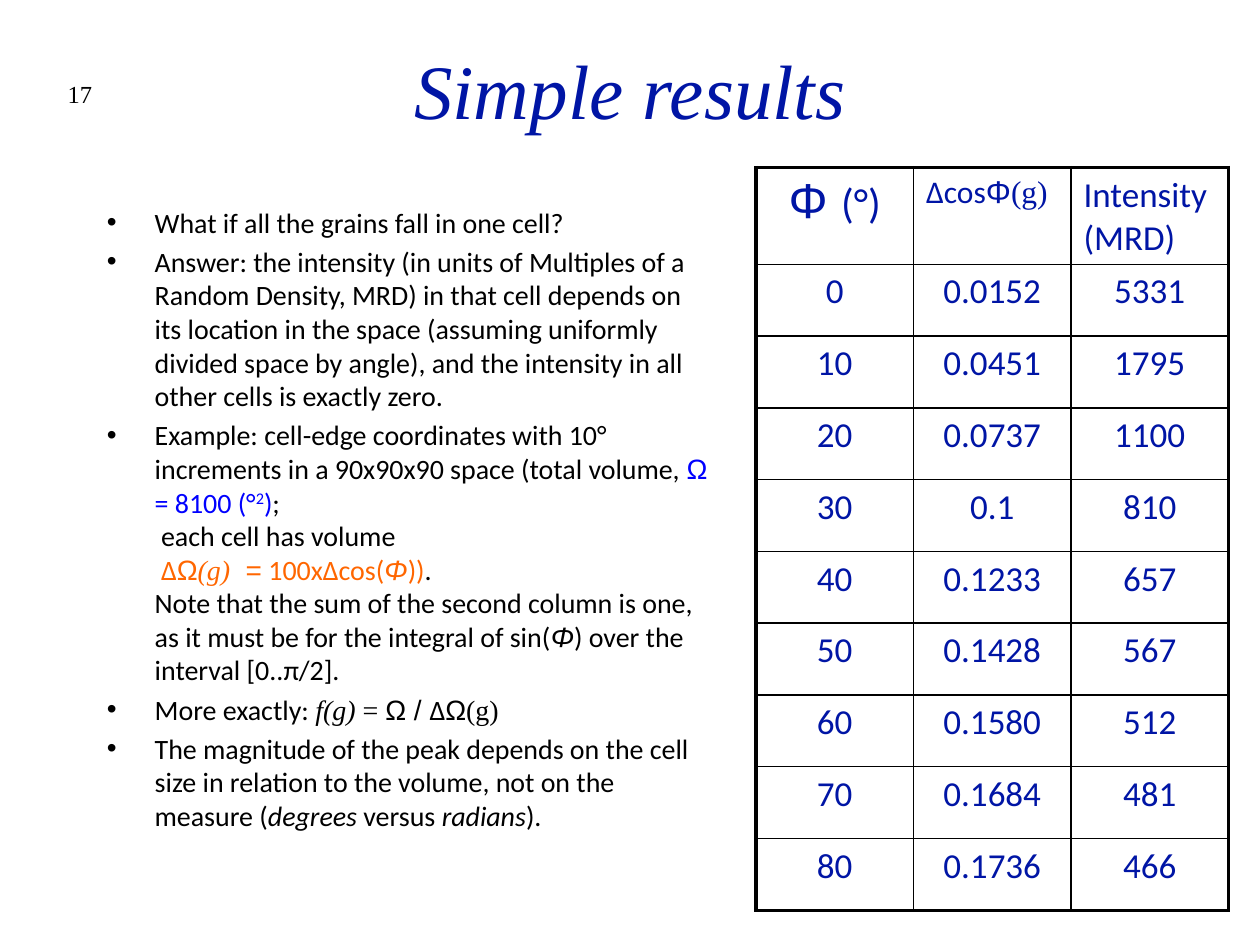
from dataclasses import dataclass

from lxml.etree import SubElement
from pptx import Presentation
from pptx.dml.color import RGBColor
from pptx.enum.text import MSO_ANCHOR, PP_ALIGN
from pptx.oxml.ns import qn
from pptx.util import Inches, Pt


@dataclass(frozen=True)
class Theme:
    sans: str = "Calibri"
    symbol: str = "Arial"
    serif: str = "Times New Roman"
    navy: str = "0015A5"
    black: str = "000000"
    blue: str = "0000FF"
    orange: str = "FF6600"
    title_size: int = 44
    phi_size: int = 28
    unit_size: int = 24
    cell_size: int = 20
    delta_size: int = 18
    body_size: int = 16
    number_size: int = 14
    outer_line: float = 2.25
    inner_line: float = 1


THEME = Theme()


@dataclass(frozen=True)
class Span:
    text: str
    font: str = THEME.sans
    color: str = THEME.black
    size: int = THEME.body_size
    italic: bool = False
    raised: bool = False


@dataclass(frozen=True)
class Box:
    left: float
    top: float
    width: float
    height: float

    def lengths(self):
        return [Inches(n) for n in (self.left, self.top, self.width, self.height)]


BULLETS = [
    [Span("What if all the grains fall in one cell?")],
    [Span("Answer: the intensity (in units of Multiples of a Random Density, MRD) "
          "in that cell depends on its location in the space (assuming uniformly "
          "divided space by angle), and the intensity in all other cells is exactly zero.")],
    [
        Span("Example: cell-edge coordinates with 10° increments in a 90x90x90 space "
             "(total volume, "),
        Span("Ω", THEME.symbol, THEME.blue),
        Span(" = 8100 (°", color=THEME.blue),
        Span("2", color=THEME.blue, raised=True),
        Span(")", color=THEME.blue),
        Span(";\n each cell has volume \n"),
        Span(" ∆", color=THEME.orange),
        Span("Ω", THEME.symbol, THEME.orange),
        Span("(g)", THEME.serif, THEME.orange, italic=True),
        Span("  =", THEME.symbol, THEME.orange),
        Span(" 100x∆cos(", color=THEME.orange),
        Span("Φ", THEME.symbol, THEME.orange, italic=True),
        Span("))", color=THEME.orange),
        Span(".  \nNote that the sum of the second column is one, as it must be "
             "for the integral of sin("),
        Span("Φ", THEME.symbol, italic=True),
        Span(") over the interval [0..π/2]."),
    ],
    [
        Span("More exactly: "),
        Span("f(g)", THEME.serif, italic=True),
        Span(" = ", THEME.serif),
        Span("Ω / ", THEME.symbol),
        Span("∆"),
        Span("Ω", THEME.symbol),
        Span("(g)", THEME.serif),
    ],
    [
        Span("The magnitude of the peak depends on the cell size in relation to the "
             "volume, not on the measure ("),
        Span("degrees ", italic=True),
        Span("versus "),
        Span("radians", italic=True),
        Span(")."),
    ],
]

HEADINGS = [
    [Span("Φ ", THEME.symbol, THEME.navy, THEME.phi_size),
     Span("(°)", color=THEME.navy, size=THEME.unit_size)],
    [Span("∆cos", color=THEME.navy, size=THEME.delta_size),
     Span("Φ", THEME.symbol, THEME.navy, THEME.delta_size),
     Span("(g)", THEME.serif, THEME.navy, THEME.delta_size)],
    [Span("Intensity (MRD)", color=THEME.navy, size=THEME.cell_size)],
]

RESULTS = [
    ("0", "0.0152", "5331"),
    ("10", "0.0451", "1795"),
    ("20", "0.0737", "1100"),
    ("30", "0.1", "810"),
    ("40", "0.1233", "657"),
    ("50", "0.1428", "567"),
    ("60", "0.1580", "512"),
    ("70", "0.1684", "481"),
    ("80", "0.1736", "466"),
]


def write(para, spans, align=PP_ALIGN.LEFT, spaced=False):
    para.alignment = align
    if spaced:
        para.space_before = Pt(round(0.2 * max(span.size for span in spans), 1))
    for span in spans:
        for index, line in enumerate(span.text.split("\n")):
            if index:
                para.add_line_break()
            if not line:
                continue
            run = para.add_run()
            run.text = line
            run.font.name = span.font
            run.font.size = Pt(span.size)
            run.font.italic = span.italic
            run.font.bold = False
            run.font.color.rgb = RGBColor.from_string(span.color)
            if span.raised:
                run.font._element.set("baseline", "30000")


def add_bullet(para):
    properties = para._p.get_or_add_pPr()
    properties.set("marL", str(Inches(0.38)))
    properties.set("indent", str(Inches(-0.38)))
    SubElement(properties, qn("a:buFont"), typeface=THEME.symbol)
    SubElement(properties, qn("a:buChar"), char="•")


def add_border(cell, side, width):
    properties = cell._tc.get_or_add_tcPr()
    line = SubElement(properties, qn(f"a:ln{side}"), w=str(Pt(width)))
    fill = SubElement(line, qn("a:solidFill"))
    SubElement(fill, qn("a:srgbClr"), val=THEME.black)


def place_title(page, box):
    title = page.shapes.title
    title.left, title.top, title.width, title.height = box.lengths()
    title.text_frame.vertical_anchor = MSO_ANCHOR.MIDDLE
    heading = Span("Simple results", THEME.serif, THEME.navy, THEME.title_size, italic=True)
    write(title.text_frame.paragraphs[0], [heading], PP_ALIGN.CENTER)


def place_number(page, box):
    frame = page.shapes.add_textbox(*box.lengths()).text_frame
    frame.word_wrap = True
    number = Span("17", THEME.serif, size=THEME.number_size)
    write(frame.paragraphs[0], [number], PP_ALIGN.RIGHT)


def place_bullets(page, box):
    frame = page.shapes.add_textbox(*box.lengths()).text_frame
    frame.word_wrap = True
    for index, spans in enumerate(BULLETS):
        para = frame.add_paragraph() if index else frame.paragraphs[0]
        write(para, spans, spaced=True)
        add_bullet(para)


def place_results(page, box):
    rows = [HEADINGS] + [
        [[Span(value, color=THEME.navy, size=THEME.cell_size)] for value in row]
        for row in RESULTS
    ]
    last_row, last_column = len(rows) - 1, len(HEADINGS) - 1
    table = page.shapes.add_table(len(rows), len(HEADINGS), *box.lengths()).table
    table.first_row = table.horz_banding = False
    row_height = 0.57
    for index, row in enumerate(table.rows):
        row.height = Inches(row_height if index else box.height - last_row * row_height)
    for r, row in enumerate(rows):
        for c, spans in enumerate(row):
            cell = table.cell(r, c)
            edges = {"L": c == 0, "R": c == last_column, "T": r == 0, "B": r == last_row}
            for side, outer in edges.items():
                add_border(cell, side, THEME.outer_line if outer else THEME.inner_line)
            cell.fill.background()
            align = PP_ALIGN.LEFT if r == 0 and c else PP_ALIGN.CENTER
            write(cell.text_frame.paragraphs[0], spans, align, spaced=True)


def main():
    deck = Presentation()
    deck.slide_width, deck.slide_height = Inches(10), Inches(7.5)
    page = deck.slides.add_slide(deck.slide_layouts[5])
    place_number(page, Box(0.25, 0.58, 0.58, 0.5))
    place_title(page, Box(0.75, 0.08, 8.5, 1.25))
    place_bullets(page, Box(0.75, 1.58, 5, 5.5))
    place_results(page, Box(6, 1.33, 3.75, 5.88))
    deck.save("out.pptx")


if __name__ == "__main__":
    main()
